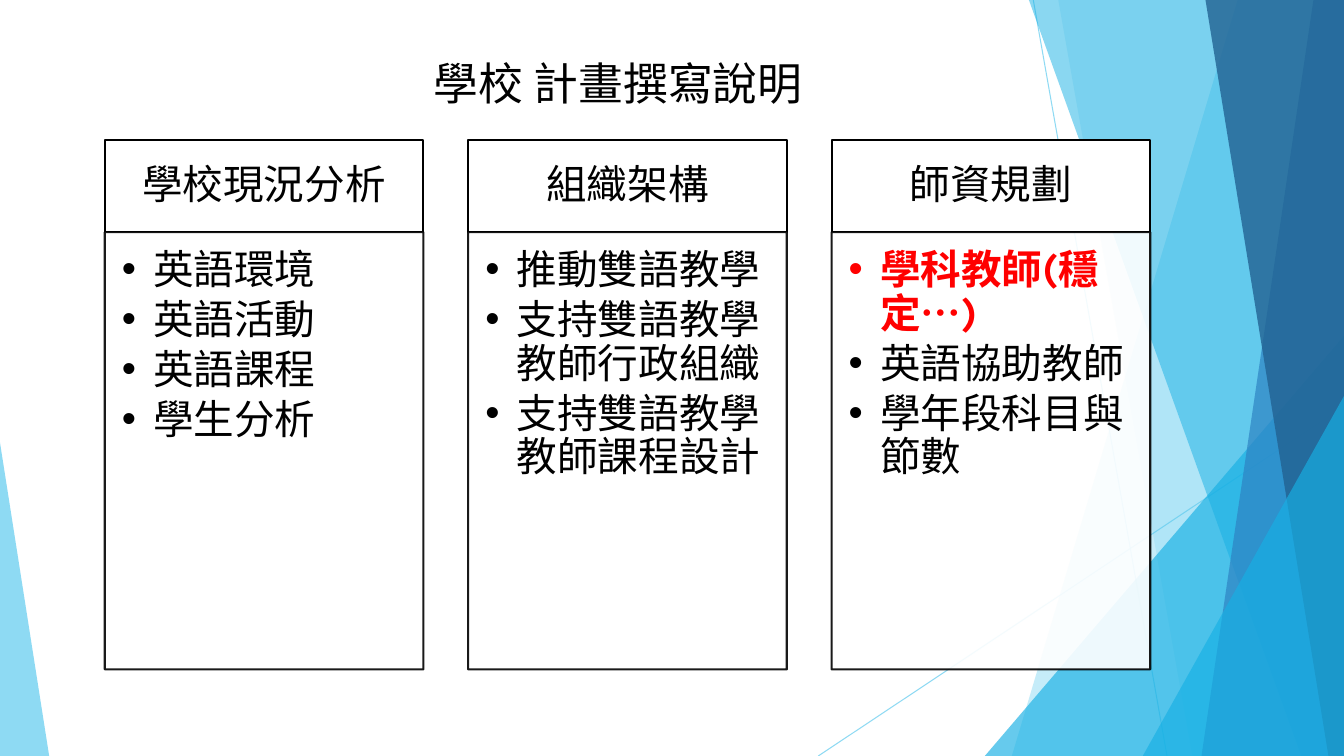
"""Build a slide with three outlined planning columns over a faceted blue backdrop."""
from lxml import etree
from pptx import Presentation
from pptx.dml.color import RGBColor
from pptx.enum import shapes, text
from pptx.oxml import ns
from pptx.util import Cm, Pt

WIDTH, HEIGHT = 33.87, 19.05
TITLE = "學校 計畫撰寫說明"
COLUMNS = [
    ("學校現況分析", ["英語環境", "英語活動", "英語課程", "學生分析"]),
    ("組織架構", ["推動雙語教學", "支持雙語教學教師行政組織", "支持雙語教學教師課程設計"]),
    ("師資規劃", ["學科教師(穩定…)", "英語協助教師", "學年段科目與節數"]),
]
HIGHLIGHT = "學科教師(穩定…)"
RAYS = [((26.04, 0), (29.41, HEIGHT)), ((WIDTH, 10.24), (20.62, HEIGHT))]
FACETS = [
    ("band", (31.19, 25.5), "5FCBEF", 36),
    ("band", (26.67, 30.05), "5FCBEF", 20),
    ("triangle", (24.82, 8.46, 9.05, 1), "17B0E4", 66),
    ("band", (25.93, 32.79), "17B0E4", 50),
    ("band", (33.1, 30.28), "2E83C3", 70),
    ("band", (30.38, 33.48), "226292", 80),
    ("triangle", (28.8, 9.98, 5.07, 1), "17B0E4", 66),
    ("triangle", (0, 11.15, 1.24, 0), "5FCBEF", 70),
]
COLUMN_LEFT, COLUMN_PITCH, COLUMN_WIDTH = 2.64, 9.16, 8.03
HEADER_TOP, HEADER_HEIGHT, BODY_HEIGHT = 3.53, 2.32, 11.02
HANGING = 0.79


def paint(color_format, color, opacity=100):
    color_format.rgb = RGBColor.from_string(color)
    if opacity < 100:
        for node in color_format._xFill.iter(ns.qn("a:srgbClr")):
            etree.SubElement(node, ns.qn("a:alpha"), val=str(opacity * 1000))


def fill_shape(shape, color, opacity=100):
    shape.shadow.inherit = False
    shape.fill.solid()
    paint(shape.fill.fore_color, color, opacity)


def write(paragraph, content, font="Karla", size=29, color="000000", bold=False,
          align=text.PP_ALIGN.LEFT, spacing=1.0, after=0, bullet=False):
    run = paragraph.add_run()
    run.text = content
    run.font.name, run.font.size, run.font.bold = font, Pt(size), bold
    paint(run.font.color, color)
    paragraph.alignment = align
    paragraph.line_spacing = spacing
    paragraph.space_before, paragraph.space_after = Pt(0), Pt(after)
    if bullet:
        properties = paragraph._p.get_or_add_pPr()
        properties.set("marL", str(Cm(HANGING)))
        properties.set("indent", str(-Cm(HANGING)))
        etree.SubElement(properties, ns.qn("a:buFont"), typeface="Arial")
        etree.SubElement(properties, ns.qn("a:buChar"), char="•")


def set_frame(frame, anchor, margins):
    frame.word_wrap = True
    frame.auto_size = text.MSO_AUTO_SIZE.NONE
    frame.vertical_anchor = anchor
    (frame.margin_left, frame.margin_top,
     frame.margin_right, frame.margin_bottom) = map(Cm, margins)


def add_ray(slide, start, end):
    ray = slide.shapes.add_connector(
        shapes.MSO_CONNECTOR.STRAIGHT, *map(Cm, start + end))
    ray.line.width = Pt(0.75)
    ray.line.fill.solid()
    paint(ray.line.color, "5FCBEF", 70)
    etree.SubElement(ray._element.spPr, ns.qn("a:effectLst"))


def add_facet(slide, kind, geometry, color, opacity):
    if kind == "band":
        top_x, bottom_x = geometry
        builder = slide.shapes.build_freeform(Cm(top_x), 0)
        corners = [(WIDTH, 0), (WIDTH, HEIGHT), (bottom_x, HEIGHT)]
        builder.add_line_segments([(Cm(x), Cm(y)) for x, y in corners], close=True)
        facet = builder.convert_to_shape()
    else:
        left, top, width, apex = geometry
        facet = slide.shapes.add_shape(
            shapes.MSO_SHAPE.ISOSCELES_TRIANGLE,
            Cm(left), Cm(top), Cm(width), Cm(HEIGHT - top))
        facet.adjustments[0] = apex
    fill_shape(facet, color, opacity)
    facet.line.fill.background()


def add_box(slide, left, top, height, opacity, anchor, margins):
    box = slide.shapes.add_shape(
        shapes.MSO_SHAPE.RECTANGLE, Cm(left), Cm(top), Cm(COLUMN_WIDTH), Cm(height))
    fill_shape(box, "FFFFFF", opacity)
    box.line.width = Pt(1.5)
    box.line.fill.solid()
    paint(box.line.color, "000000", opacity)
    set_frame(box.text_frame, anchor, margins)
    return box.text_frame


def add_column(slide, index, heading, items):
    left = COLUMN_LEFT + index * COLUMN_PITCH
    header = add_box(slide, left, HEADER_TOP, HEADER_HEIGHT, 100,
                     text.MSO_ANCHOR.MIDDLE, (0.58, 0.33, 0.58, 0.33))
    write(header.paragraphs[0], heading, font="Calibri",
          align=text.PP_ALIGN.CENTER, spacing=0.9, after=10)
    body = add_box(slide, left, HEADER_TOP + HEADER_HEIGHT, BODY_HEIGHT, 90,
                   text.MSO_ANCHOR.TOP, (0.43, 0.43, 0.58, 0.64))
    for number, item in enumerate(items):
        paragraph = body.add_paragraph() if number else body.paragraphs[0]
        marked = item == HIGHLIGHT
        write(paragraph, item, color="FF0000" if marked else "000000", bold=marked,
              spacing=0.9, after=4.4, bullet=True)


def main():
    presentation = Presentation()
    presentation.slide_width, presentation.slide_height = Cm(WIDTH), Cm(HEIGHT)
    slide = presentation.slides.add_slide(presentation.slide_layouts[5])
    for start, end in RAYS:
        add_ray(slide, start, end)
    for facet in FACETS:
        add_facet(slide, *facet)
    title = slide.shapes.title
    title.left, title.top, title.width, title.height = map(Cm, (10.06, 1.27, 11.05, 1.63))
    set_frame(title.text_frame, text.MSO_ANCHOR.TOP, (0.25, 0.13, 0.25, 0.13))
    write(title.text_frame.paragraphs[0], TITLE, font="Noto Sans CJK SC", size=32,
          align=text.PP_ALIGN.CENTER)
    for index, (heading, items) in enumerate(COLUMNS):
        add_column(slide, index, heading, items)
    presentation.save("out.pptx")


if __name__ == "__main__":
    main()
